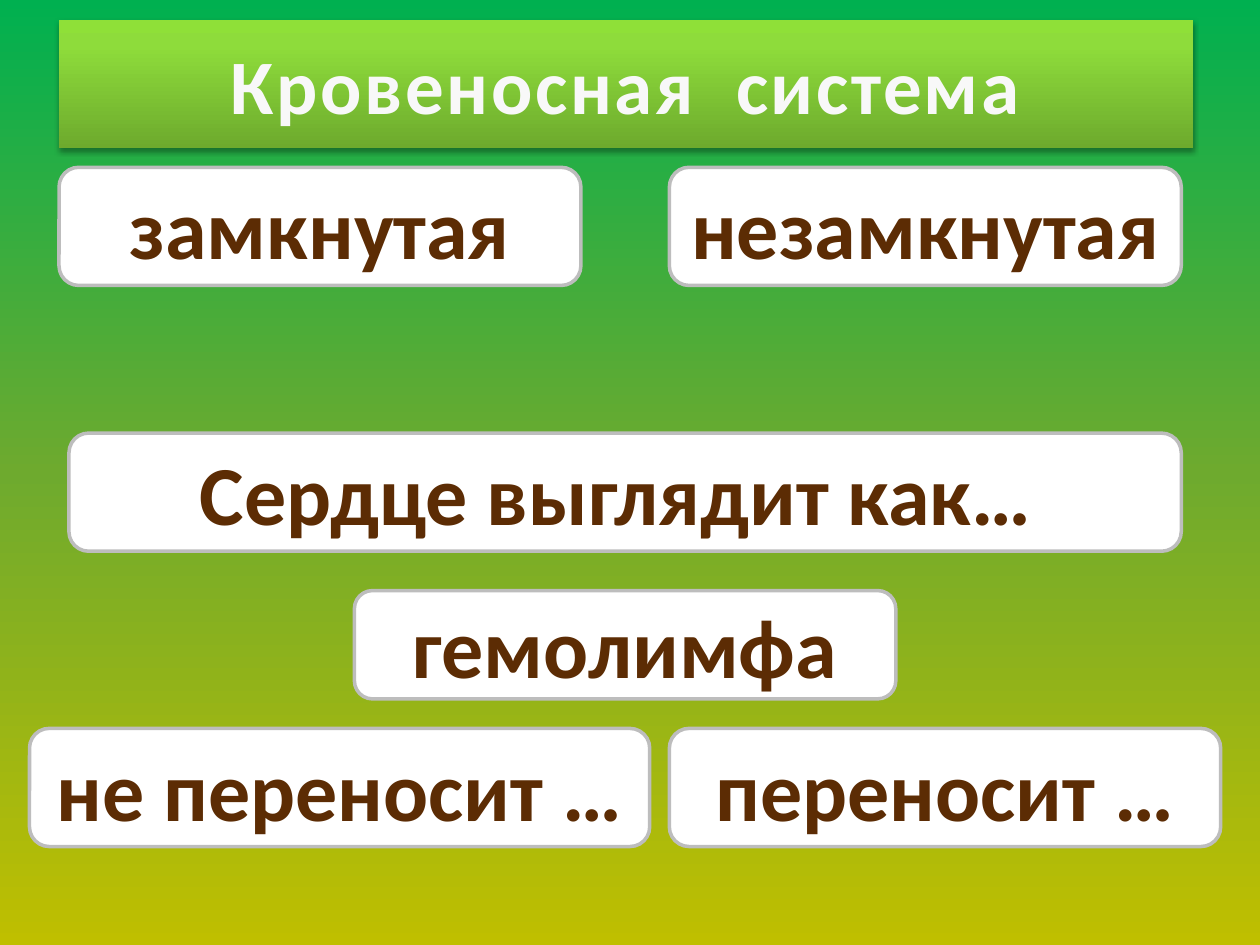
from copy import deepcopy
from lxml.etree import SubElement
from pptx import Presentation
from pptx.dml.color import RGBColor
from pptx.enum.shapes import MSO_SHAPE
from pptx.enum.text import MSO_ANCHOR, PP_ALIGN
from pptx.oxml.ns import qn
from pptx.util import Pt


def color(value):
    return RGBColor.from_string(value)


def paint_gradient(fill, element, angle, stops):
    fill.gradient()
    fill.gradient_angle = angle
    stop_list = next(element.iter(qn("a:gsLst")))
    stop_list.insert(1, deepcopy(stop_list[0]))
    for stop, (position, value) in zip(fill.gradient_stops, stops):
        stop.position = position
        stop.color.rgb = color(value)


deck = Presentation()
deck.slide_width, deck.slide_height = Pt(720), Pt(540)
page = deck.slides.add_slide(deck.slide_layouts[6])
paint_gradient(page.background.fill, page.element, 270,
               [(0, "00B050"), (0.5, "6EAA2E"), (1, "BFBF00")])

title_format = {"name": "Calibri", "size": Pt(44), "bold": True}
card_format = {"name": "Calibri", "size": Pt(48), "bold": True}
rectangle, rounded = MSO_SHAPE.RECTANGLE, MSO_SHAPE.ROUNDED_RECTANGLE
boxes = [
    ("Кровеносная  система", rectangle, 33.75, 11.4, 648, 73.4),
    ("замкнутая", rounded, 33.75, 95.6, 298.2, 67.5),
    ("гемолимфа", rounded, 202.5, 337.5, 309.4, 61.9),
    ("незамкнутая", rounded, 382.5, 95.6, 292.5, 67.5),
    ("Сердце выглядит как… ", rounded, 39.4, 247.5, 635.6, 67.5),
    ("переносит …", rounded, 382.5, 416.25, 315, 67.5),
    ("не переносит …", rounded, 16.9, 416.25, 354.4, 67.5),
]

for text, outline, left, top, width, height in boxes:
    is_title = outline == rectangle
    box = page.shapes.add_shape(outline, Pt(left), Pt(top), Pt(width), Pt(height))
    box.shadow.inherit = False
    if is_title:
        paint_gradient(box.fill, box.element, 90,
                       [(0, "6DAA2D"), (0.8, "8EDC3B"), (1, "8FE038")])
        box.line.fill.background()
        effects = next(box.element.iter(qn("a:effectLst")))
        shadow = SubElement(effects, qn("a:outerShdw"), blurRad=str(Pt(3.1)),
                            dist=str(Pt(1.8)), dir="5400000", rotWithShape="0")
        shade = SubElement(shadow, qn("a:srgbClr"), val="000000")
        SubElement(shade, qn("a:alpha"), val="35000")
    else:
        box.fill.solid()
        box.fill.fore_color.rgb = color("FFFFFF")
        box.line.color.rgb = color("BDBDBD")
        box.line.width = Pt(2)
    frame = box.text_frame
    frame.word_wrap = True
    frame.vertical_anchor = MSO_ANCHOR.MIDDLE
    para = frame.paragraphs[0]
    para.alignment = PP_ALIGN.CENTER
    span = para.add_run()
    span.text = text
    for name, value in (title_format if is_title else card_format).items():
        setattr(span.font, name, value)
    span.font.color.rgb = color("F8F8F8" if is_title else "5C2C04")
    if is_title:
        next(box.element.iter(qn("a:rPr"))).set("spc", "150")

deck.save("out.pptx")
